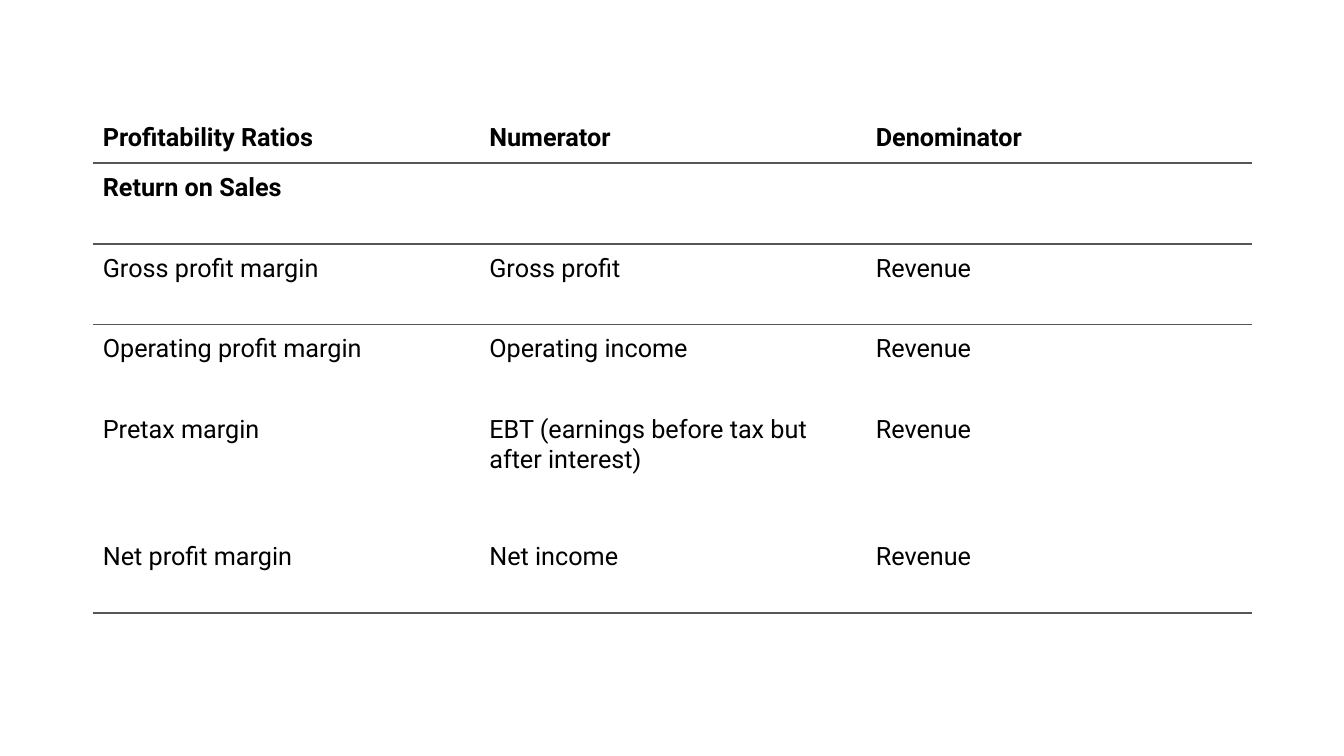
from dataclasses import dataclass

from lxml import etree
from pptx import Presentation
from pptx.dml.color import RGBColor
from pptx.enum.text import MSO_ANCHOR
from pptx.oxml.ns import qn
from pptx.util import Inches, Pt

TOP, BOTTOM = MSO_ANCHOR.TOP, MSO_ANCHOR.BOTTOM
PLAIN_STYLE = "{2D5ABB26-0587-4C30-8999-92F81FD0307C}"


@dataclass(frozen=True)
class Theme:
    font: str = "Roboto"
    size: float = 18
    ink: str = "000000"
    rule: str = "53565A"
    rule_width: float = 1.5
    inset: float = 0.1


THEME = Theme()
WIDTH, HEIGHT = 13.33, 7.5
BOX = (0.92, 0.82, 11.5, 5.26)
ROW = 0.8
TALL = 4  # row that takes the height the others leave

RATIOS = [
    ("Profitability Ratios", "Numerator", "Denominator"),
    ("Return on Sales",),
    ("Gross profit margin", "Gross profit", "Revenue"),
    ("Operating profit margin", "Operating income", "Revenue"),
    ("Pretax margin", "EBT (earnings before tax but after interest)", "Revenue"),
    ("Net profit margin", "Net income", "Revenue"),
]
HEADS = 2  # bold rows at the top
RULED = {0, 1, len(RATIOS) - 1}  # rows with a line below


def add_rule(cell, side):
    """Draw a line on one side of a cell: "T" or "B"."""
    props = cell._tc.get_or_add_tcPr()
    line = etree.Element(qn("a:ln" + side), w=str(Pt(THEME.rule_width)))
    fill = etree.SubElement(line, qn("a:solidFill"))
    etree.SubElement(fill, qn("a:srgbClr"), val=THEME.rule)
    props.insert(len(props.findall(qn("a:lnT"))), line)


def style_cell(cell, text, bold, anchor):
    cell.fill.background()
    cell.vertical_anchor = anchor
    cell.margin_left = cell.margin_right = Inches(THEME.inset)
    cell.margin_top = cell.margin_bottom = Inches(THEME.inset)
    cell.text = text
    font = cell.text_frame.paragraphs[0].font
    font.name, font.size, font.bold = THEME.font, Pt(THEME.size), bold
    font.color.rgb = RGBColor.from_string(THEME.ink)


def add_ratios(slide, box):
    left, top, width, height = box
    rows, cols = len(RATIOS), len(RATIOS[0])
    frame = slide.shapes.add_table(rows, cols, *map(Inches, box))
    table = frame.table
    table.first_row = table.horz_banding = False
    table._tbl.tblPr.find(qn("a:tableStyleId")).text = PLAIN_STYLE

    for col in table.columns:
        col.width = Inches(width / cols)
    for r, texts in enumerate(RATIOS):
        tall = height - ROW * (rows - 1)
        table.rows[r].height = Inches(tall if r == TALL else ROW)
        for c in range(cols):
            cell = table.cell(r, c)
            text = texts[c] if c < len(texts) else ""
            style_cell(cell, text, r < HEADS, TOP if r else BOTTOM)
            if r - 1 in RULED:
                add_rule(cell, "T")
            if r in RULED:
                add_rule(cell, "B")
        if len(texts) == 1:
            table.cell(r, 0).merge(table.cell(r, cols - 1))


def main():
    deck = Presentation()
    deck.slide_width, deck.slide_height = Inches(WIDTH), Inches(HEIGHT)
    slide = deck.slides.add_slide(deck.slide_layouts[6])
    add_ratios(slide, BOX)
    deck.save("out.pptx")


if __name__ == "__main__":
    main()
